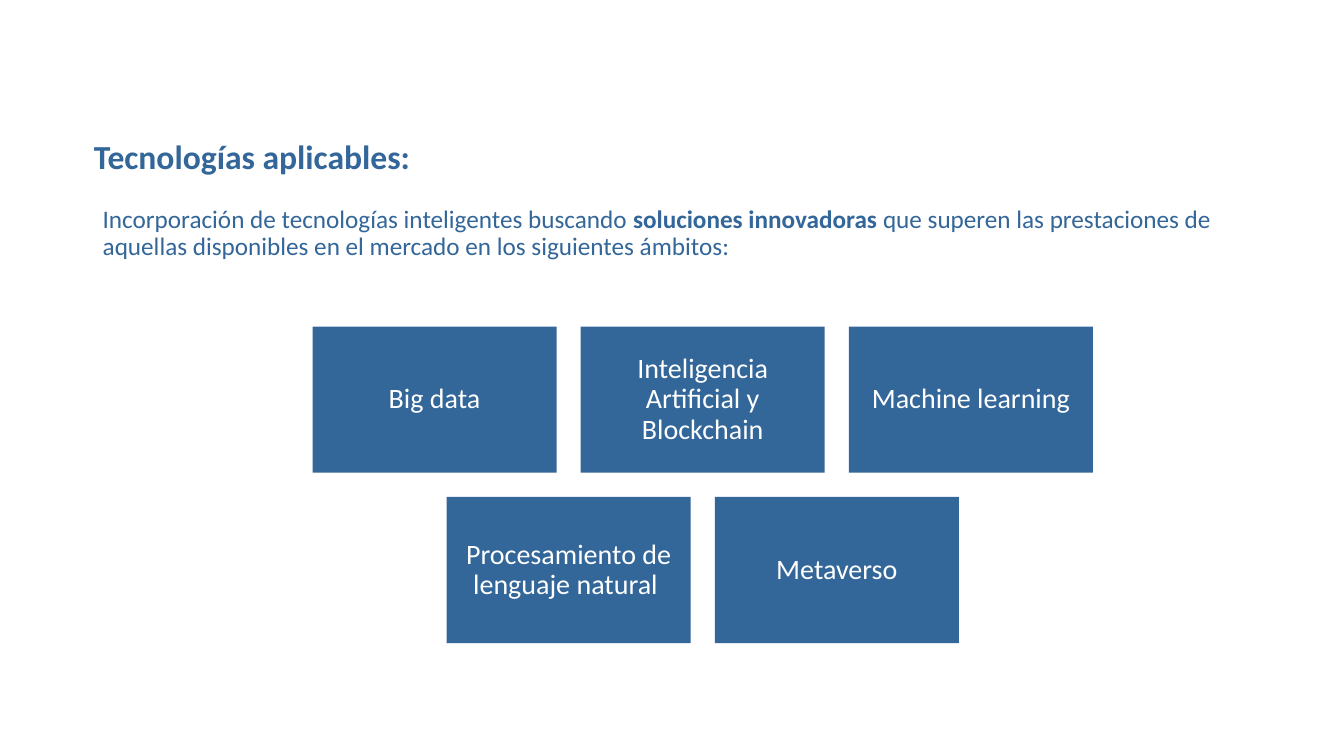
"""Build a slide that lists five applicable technologies in centred rows."""
from pptx import Presentation
from pptx.dml.color import RGBColor
from pptx.enum.shapes import MSO_SHAPE
from pptx.enum.text import MSO_ANCHOR, MSO_AUTO_SIZE, PP_ALIGN
from pptx.util import Pt

RECT = MSO_SHAPE.RECTANGLE
TOP, MIDDLE = MSO_ANCHOR.TOP, MSO_ANCHOR.MIDDLE
LEFT, CENTER = PP_ALIGN.LEFT, PP_ALIGN.CENTER
NO_FIT = MSO_AUTO_SIZE.NONE
BLUE = RGBColor(0x33, 0x66, 0x99)
WHITE = RGBColor(0xFF, 0xFF, 0xFF)
FONT = "Calibri"

TITLE = [("Tecnologías aplicables:", True)]
INTRO = [
    ("Incorporación de tecnologías inteligentes buscando ", False),
    ("soluciones innovadoras ", True),
    ("que superen las prestaciones de aquellas disponibles en el mercado "
     "en los siguientes ámbitos:", False),
]
ROWS = [
    ["Big data", "Inteligencia Artificial y Blockchain", "Machine learning"],
    ["Procesamiento de lenguaje natural ", "Metaverso"],
]

PX = 9144
SLIDE = (1333, 750)
TITLE_BOX = (83, 134, 1167, 58)
INTRO_BOX = (92, 200, 1158, 350)
MID_X, TOP_Y = 697, 324
CARD_W, CARD_H, GAP = 242, 145, 24


def emu(*sizes):
    """Turn px lengths into EMU."""
    return [round(size * PX) for size in sizes]


def write(shape, runs, size, color=BLUE, align=LEFT, anchor=TOP, pad=(10, 5)):
    """Fill a shape with one paragraph of (text, bold) runs."""
    frame = shape.text_frame
    frame.word_wrap = True
    frame.auto_size = NO_FIT
    frame.vertical_anchor = anchor
    side, edge = emu(*pad)
    frame.margin_left = frame.margin_right = side
    frame.margin_top = frame.margin_bottom = edge
    para = frame.paragraphs[0]
    para.alignment = align
    para.line_spacing = 0.9
    for text, bold in runs:
        run = para.add_run()
        run.text = text
        run.font.name = FONT
        run.font.size = Pt(size)
        run.font.bold = bold
        run.font.color.rgb = color


def add_card(slide, text, x, y):
    """Draw one blue card with a centred label."""
    card = slide.shapes.add_shape(RECT, *emu(x, y, CARD_W, CARD_H))
    card.shadow.inherit = False
    card.fill.solid()
    card.fill.fore_color.rgb = BLUE
    card.line.fill.background()
    write(card, [(text, False)], 20, color=WHITE, align=CENTER,
          anchor=MIDDLE, pad=(8, 8))


def main():
    """Build and save the slide."""
    deck = Presentation()
    deck.slide_width, deck.slide_height = emu(*SLIDE)
    slide = deck.slides.add_slide(deck.slide_layouts[5])

    title = slide.shapes.title
    title.left, title.top, title.width, title.height = emu(*TITLE_BOX)
    write(title, TITLE, 24)
    write(slide.shapes.add_textbox(*emu(*INTRO_BOX)), INTRO, 18)

    for row, names in enumerate(ROWS):
        span = len(names) * (CARD_W + GAP) - GAP
        y = TOP_Y + row * (CARD_H + GAP)
        for col, name in enumerate(names):
            add_card(slide, name, MID_X - span / 2 + col * (CARD_W + GAP), y)

    deck.save("out.pptx")


if __name__ == "__main__":
    main()
